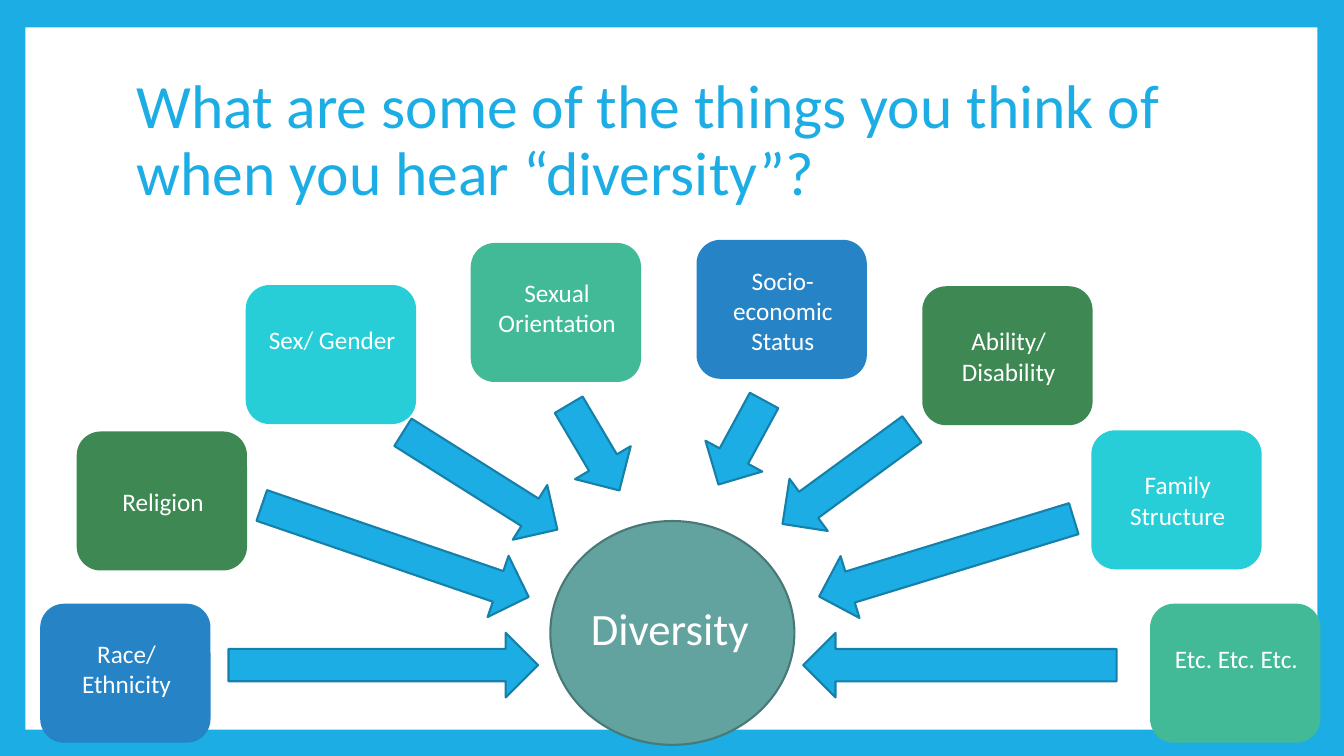
from dataclasses import dataclass

from pptx import Presentation
from pptx.dml.color import RGBColor
from pptx.enum.shapes import MSO_SHAPE
from pptx.enum.text import MSO_ANCHOR, MSO_AUTO_SIZE, PP_ALIGN
from pptx.util import Cm, Pt

COLOURS = {
    "sky": "1CADE4",
    "sky_edge": "1580A9",
    "blue": "2683C6",
    "aqua": "27CED7",
    "mint": "42BA97",
    "green": "3E8853",
    "sage": "62A39F",
    "sage_edge": "497976",
    "white": "FFFFFF",
}
FONT = "Calibri"
CARD_WIDTH, CARD_HEIGHT = 4.24, 3.45
LABEL_WIDTH, LABEL_INDENT = 4.14, 0.08
LINE_HEIGHT, LABEL_PADDING = 0.77, 0.25
ARROW_HEIGHT = 1.63


@dataclass
class Topic:
    text: str
    colour: str
    left: float
    top: float
    label_top: float
    lines: int = 2


@dataclass
class Arrow:
    centre_x: float
    centre_y: float
    length: float
    angle: float


TOPICS = [
    Topic("Race/ Ethnicity", "blue", 1.04, 15.24, 15.95),
    Topic("Religion", "green", 1.96, 10.9, 12.12, 1),
    Topic("Sex/ Gender", "aqua", 6.22, 7.21, 8.05),
    Topic("Sexual Orientation", "mint", 11.89, 6.15, 6.86),
    Topic("Socio-economic Status", "blue", 17.58, 6.07, 6.55, 3),
    Topic("Ability/ Disability", "green", 23.27, 7.24, 8.08),
    Topic("Family Structure", "aqua", 27.53, 10.87, 11.71),
    Topic("Etc. Etc. Etc.", "mint", 29.01, 15.24, 16.08),
]

ARROWS = [
    Arrow(9.66, 16.76, 7.8, 0),
    Arrow(9.96, 13.89, 7.11, 18.9),
    Arrow(12.1, 12.12, 4.6, 32.2),
    Arrow(14.97, 11.28, 2.51, 59.4),
    Arrow(18.68, 11.15, 2.41, 118.5),
    Arrow(21.35, 12.01, 4.04, 143.8),
    Arrow(23.85, 14.05, 6.71, 163),
    Arrow(24.19, 16.76, 7.9, 180),
]


def colour(name: str) -> RGBColor:
    return RGBColor.from_string(COLOURS[name])


def add_figure(page, kind, left: float, top: float, width: float, height: float,
               fill: str, edge: str | None = None):
    figure = page.shapes.add_shape(kind, Cm(left), Cm(top), Cm(width), Cm(height))
    figure.shadow.inherit = False
    figure.fill.solid()
    figure.fill.fore_color.rgb = colour(fill)
    if edge:
        figure.line.color.rgb = colour(edge)
        figure.line.width = Pt(1.5)
    else:
        figure.line.fill.background()
    return figure


def write(para, text: str, size: int, ink: str, align: PP_ALIGN) -> None:
    para.alignment = align
    span = para.add_run()
    span.text = text
    span.font.name = FONT
    span.font.size = Pt(size)
    span.font.color.rgb = colour(ink)


def add_label(page, text: str, left: float, top: float, width: float,
              height: float, size: int) -> None:
    box = page.shapes.add_textbox(Cm(left), Cm(top), Cm(width), Cm(height))
    box.text_frame.word_wrap = True
    box.text_frame.auto_size = MSO_AUTO_SIZE.SHAPE_TO_FIT_TEXT
    write(box.text_frame.paragraphs[0], text, size, "white", PP_ALIGN.CENTER)


def add_title(page, text: str) -> None:
    title = page.shapes.title
    title.left, title.top = Cm(3.18), Cm(1.7)
    title.width, title.height = Cm(27.43), Cm(3.76)
    frame = title.text_frame
    frame.word_wrap = True
    frame.auto_size = MSO_AUTO_SIZE.NONE
    frame.vertical_anchor = MSO_ANCHOR.MIDDLE
    para = frame.paragraphs[0]
    para.line_spacing = 0.9
    write(para, text, 44, "sky", PP_ALIGN.LEFT)


def add_card(page, topic: Topic) -> None:
    add_figure(page, MSO_SHAPE.ROUNDED_RECTANGLE, topic.left, topic.top,
               CARD_WIDTH, CARD_HEIGHT, topic.colour, topic.colour)
    add_label(page, topic.text, topic.left + LABEL_INDENT, topic.label_top,
              LABEL_WIDTH, topic.lines * LINE_HEIGHT + LABEL_PADDING, 18)


def add_arrow(page, arrow: Arrow) -> None:
    figure = add_figure(page, MSO_SHAPE.RIGHT_ARROW,
                        arrow.centre_x - arrow.length / 2,
                        arrow.centre_y - ARROW_HEIGHT / 2,
                        arrow.length, ARROW_HEIGHT, "sky", "sky_edge")
    figure.rotation = arrow.angle


def main() -> None:
    deck = Presentation()
    deck.slide_width, deck.slide_height = Cm(33.87), Cm(19.05)
    page = deck.slides.add_slide(deck.slide_layouts.get_by_name("Title Only"))
    page.background.fill.solid()
    page.background.fill.fore_color.rgb = colour("sky")

    panel = add_figure(page, MSO_SHAPE.RECTANGLE, 0.64, 0.69, 32.56, 17.7, "white")
    page.shapes.title.element.addprevious(panel.element)
    add_title(page, "What are some of the things you think of when you hear “diversity”?")

    add_figure(page, MSO_SHAPE.OVAL, 13.87, 13.13, 6.15, 5.64, "sage", "sage_edge")
    add_label(page, "Diversity", 13.77, 15.01, 6.22, 1.63, 32)
    for topic in TOPICS:
        add_card(page, topic)
    for arrow in ARROWS:
        add_arrow(page, arrow)
    deck.save("out.pptx")


if __name__ == "__main__":
    main()
